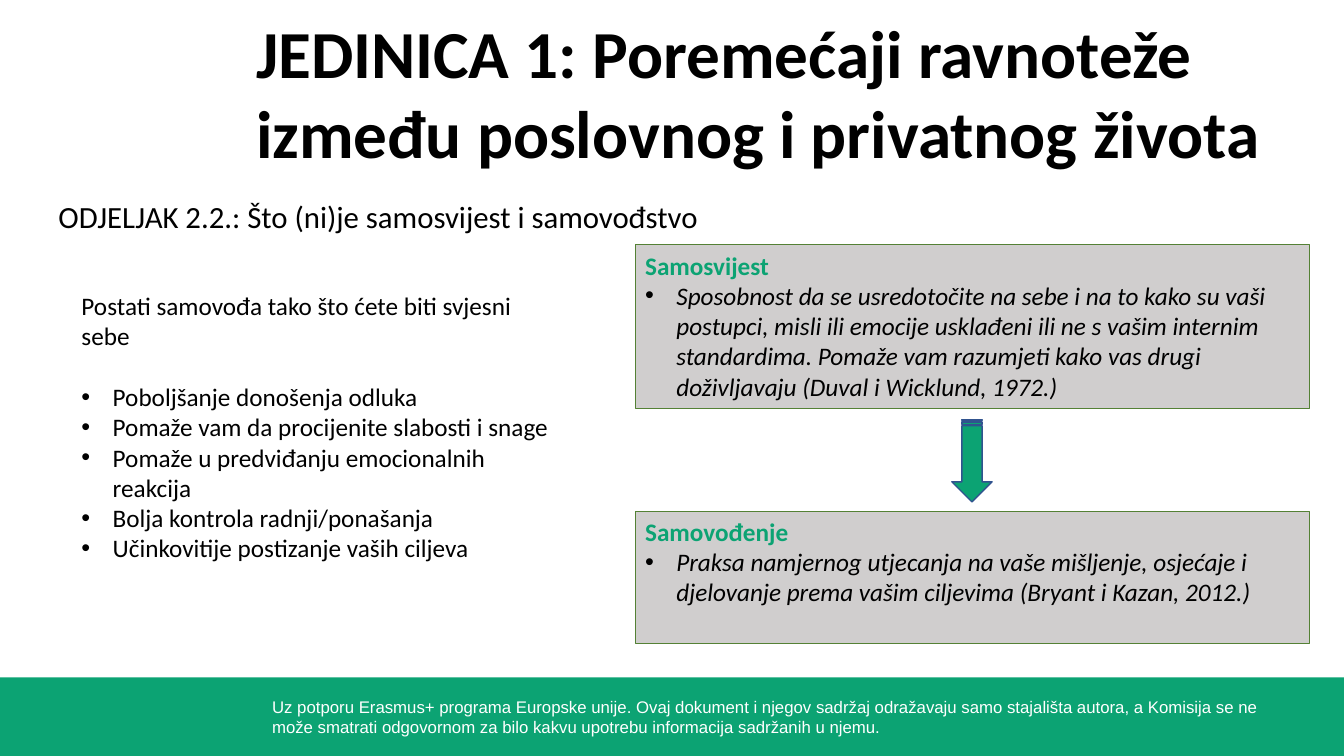
from lxml.etree import SubElement
from pptx import Presentation
from pptx.dml.color import RGBColor
from pptx.enum.shapes import MSO_SHAPE
from pptx.enum.text import MSO_ANCHOR, PP_ALIGN
from pptx.oxml.ns import qn
from pptx.util import Inches, Pt

GREEN, BLACK, WHITE, GREY = "0CA373", "000000", "FFFFFF", "D0CECE"


def paint(sp, fill, line=None, width=1):
    sp.shadow.inherit = False
    sp.fill.solid()
    sp.fill.fore_color.rgb = RGBColor.from_string(fill)
    if line:
        sp.line.color.rgb = RGBColor.from_string(line)
        sp.line.width = Pt(width)
    else:
        sp.line.fill.background()


def write(tf, text, size=18, color=BLACK, font="Calibri", bold=False,
          italic=False, bullet=False, before=0):
    p = tf.paragraphs[0] if not tf.text else tf.add_paragraph()
    p.alignment = PP_ALIGN.LEFT
    if bullet:
        pPr = p._p.get_or_add_pPr()
        pPr.set("marL", str(Inches(0.31)))
        pPr.set("indent", str(-Inches(0.31)))
        SubElement(SubElement(pPr, qn("a:buClr")), qn("a:srgbClr"), val=BLACK)
        SubElement(pPr, qn("a:buFont"), typeface="Arial")
        SubElement(pPr, qn("a:buChar"), char="•")
    if before:
        p.space_before = Pt(before)
    r = p.add_run()
    r.text = text
    r.font.name = font
    r.font.size = Pt(size)
    r.font.bold = bold
    r.font.italic = italic
    r.font.color.rgb = RGBColor.from_string(color)


prs = Presentation()
prs.slide_width, prs.slide_height = Inches(13.33), Inches(7.5)
s = prs.slides.add_slide(prs.slide_layouts[6])

sp = s.shapes.add_shape(MSO_SHAPE.RECTANGLE, Inches(0), Inches(6.72),
                        Inches(13.33), Inches(0.78))
paint(sp, GREEN)

texts = [
    (2.6, 6.86, 10.42, 0.5, 0.1, 0.05,
     "Uz potporu Erasmus+ programa Europske unije. Ovaj dokument i njegov sadržaj "
     "odražavaju samo stajališta autora, a Komisija se ne može smatrati odgovornom "
     "za bilo kakvu upotrebu informacija sadržanih u njemu.",
     dict(size=12, color=WHITE, font="Arial")),
    (2.54, 0.1, 11.38, 0.82, 0, 0.01,
     "JEDINICA 1: Poremećaji ravnoteže između poslovnog i privatnog života",
     dict(size=48, bold=True)),
    (0.58, 1.94, 8.42, 0.39, 0, 0.02,
     "ODJELJAK 2.2.: Što (ni)je samosvijest i samovođstvo", dict(size=22)),
    (0.71, 2.83, 4.92, 2.52, 0.1, 0.05,
     "Postati samovođa tako što ćete biti svjesni sebe", {}),
]
for x, y, w, h, side, top, text, fmt in texts:
    tf = s.shapes.add_textbox(Inches(x), Inches(y), Inches(w), Inches(h)).text_frame
    tf.word_wrap = True
    tf.margin_left = tf.margin_right = Inches(side)
    tf.margin_top = Inches(top)
    tf.margin_bottom = Inches(0.05 if side else 0)
    write(tf, text, **fmt)

benefits = [
    "Poboljšanje donošenja odluka",
    "Pomaže vam da procijenite slabosti i snage",
    "Pomaže u predviđanju emocionalnih reakcija",
    "Bolja kontrola radnji/ponašanja",
    "Učinkovitije postizanje vaših ciljeva",
]
for i, benefit in enumerate(benefits):
    write(tf, benefit, bullet=True, before=0 if i else 22)

definitions = [
    (2.43, 1.62, "Samosvijest",
     "Sposobnost da se usredotočite na sebe i na to kako su vaši postupci, misli ili "
     "emocije usklađeni ili ne s vašim internim standardima. Pomaže vam razumjeti "
     "kako vas drugi doživljavaju (Duval i Wicklund, 1972.)"),
    (5.07, 1.31, "Samovođenje",
     "Praksa namjernog utjecanja na vaše mišljenje, osjećaje i djelovanje prema "
     "vašim ciljevima (Bryant i Kazan, 2012.)"),
]
for y, h, term, meaning in definitions:
    sp = s.shapes.add_shape(MSO_SHAPE.RECTANGLE, Inches(6.3), Inches(y),
                            Inches(6.69), Inches(h))
    paint(sp, GREY, "548135", 0.75)
    tf = sp.text_frame
    tf.word_wrap = True
    tf.vertical_anchor = MSO_ANCHOR.TOP
    write(tf, term, color=GREEN, bold=True)
    write(tf, meaning, italic=True, bullet=True)

sp = s.shapes.add_shape(MSO_SHAPE.STRIPED_RIGHT_ARROW, Inches(9.23), Inches(4.37),
                        Inches(0.82), Inches(0.4))
sp.rotation = 90
paint(sp, GREEN, "31538F")

prs.save("out.pptx")
